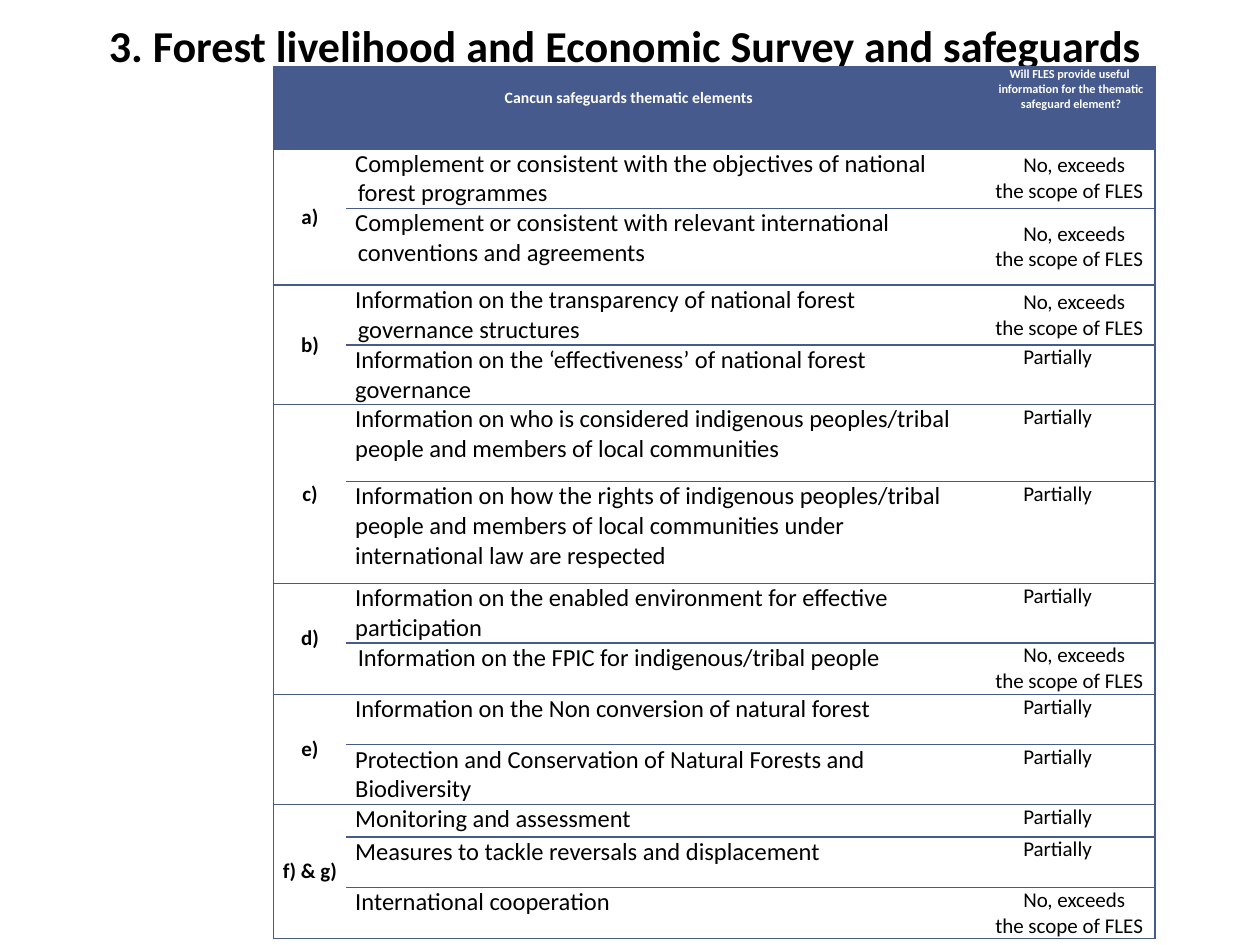
from typing import NamedTuple

from lxml.etree import SubElement
from pptx import Presentation
from pptx.dml.color import RGBColor
from pptx.enum.text import MSO_ANCHOR as Anchor, MSO_AUTO_SIZE as AutoSize, PP_ALIGN as Align
from pptx.oxml.ns import qn
from pptx.util import Pt

BLUE, BLACK, WHITE = "475A8D", "000000", "FFFFFF"
HANG = (1.5, -1.5)  # left margin and first-line indent
FLUSH = (0, 0)
NUDGE = (1.5, 0)
ANSWER_INDENT = (1.5, 16)
NO, PARTLY = "No, exceeds the scope of FLES", "Partially"


class Element(NamedTuple):
    text: str
    answer: str
    height: float
    indent: tuple = HANG
    anchor: Anchor = Anchor.TOP  # of the answer


class Safeguard(NamedTuple):
    label: str
    elements: list


SAFEGUARDS = [
    Safeguard("a)", [
        Element("Complement or consistent with the objectives of national forest programmes",
                NO, 28.8, anchor=Anchor.MIDDLE),
        Element("Complement or consistent with relevant international conventions and agreements",
                NO, 43.9, anchor=Anchor.MIDDLE)]),
    Safeguard("b)", [
        Element("Information on the transparency of national forest governance structures",
                NO, 28.8, anchor=Anchor.MIDDLE),
        Element("Information on the ‘effectiveness’ of national forest governance",
                PARTLY, 28.8, FLUSH)]),
    Safeguard("c)", [
        Element("Information on who is considered indigenous peoples/tribal people and members "
                "of local communities", PARTLY, 43.9, FLUSH),
        Element("Information on how the rights of indigenous peoples/tribal people and members "
                "of local communities under international law are respected",
                PARTLY, 58.3, FLUSH)]),
    Safeguard("d)", [
        Element("Information on the enabled environment for effective participation",
                PARTLY, 28.8, FLUSH),
        Element("Information on the FPIC for indigenous/tribal people", NO, 28.8, NUDGE)]),
    Safeguard("e)", [
        Element("Information on the Non conversion of natural forest", PARTLY, 28.8, FLUSH),
        Element("Protection and Conservation of Natural Forests and Biodiversity",
                PARTLY, 28.8, FLUSH)]),
    Safeguard("f) & g)", [
        Element("Monitoring and assessment", PARTLY, 18.7),
        Element("Measures to tackle reversals and displacement", PARTLY, 28.8),
        Element("International cooperation", NO, 23.8, anchor=Anchor.MIDDLE)]),
]


def rgb(color: str) -> RGBColor:
    return RGBColor.from_string(color)


def write(tf, text: str, *, size: float, bold: bool = False, color: str = BLACK,
          align: Align = Align.LEFT, indent: tuple = FLUSH) -> None:
    p = tf.paragraphs[0]
    p.alignment = align
    pPr = p._p.get_or_add_pPr()
    pPr.set("marL", str(Pt(indent[0])))
    pPr.set("indent", str(Pt(indent[1])))
    r = p.add_run()
    r.text = text
    r.font.name, r.font.size, r.font.bold = "Calibri", Pt(size), bold
    r.font.color.rgb = rgb(color)


def set_borders(cell, sides: str) -> None:
    """Rule the given sides (of L, R, T, B) and clear the others."""
    tcPr = cell._tc.get_or_add_tcPr()
    for i, side in enumerate("LRTB"):
        ln = SubElement(tcPr, qn("a:ln" + side), w=str(Pt(1)))
        tcPr.insert(i, ln)
        if side in sides:
            fill = SubElement(ln, qn("a:solidFill"))
            SubElement(fill, qn("a:srgbClr"), val=BLUE)
        else:
            SubElement(ln, qn("a:noFill"))


def format_cell(cell, sides: str, header: bool) -> None:
    set_borders(cell, sides)
    cell.margin_left = cell.margin_right = Pt(5)
    cell.margin_top = cell.margin_bottom = 0
    if header:
        cell.fill.solid()
        cell.fill.fore_color.rgb = rgb(BLUE)
    else:
        cell.fill.background()


def add_title(s, text: str) -> None:
    sp = s.shapes.title
    sp.left, sp.top, sp.width, sp.height = Pt(36), Pt(12.2), Pt(648), Pt(26.6)
    tf = sp.text_frame
    tf.auto_size, tf.vertical_anchor = AutoSize.NONE, Anchor.MIDDLE
    write(tf, text, size=25.2, bold=True, align=Align.CENTER)


def add_safeguard_table(s) -> None:
    heights = [46.8] + [e.height for g in SAFEGUARDS for e in g.elements]
    table = s.shapes.add_table(len(heights), 3, Pt(156.2), Pt(38.2),
                               Pt(504), Pt(sum(heights))).table
    table.first_row = table.horz_banding = False
    for col, width in zip(table.columns, (41.8, 364.3, 97.9)):
        col.width = Pt(width)
    for i, height in enumerate(heights):
        table.rows[i].height = Pt(height)
        for j, sides in enumerate(("LTB", "TB", "RTB")):
            format_cell(table.cell(i, j), sides, header=i == 0)

    # Header row
    head = table.cell(0, 0)
    head.merge(table.cell(0, 1))
    head.vertical_anchor, head.margin_bottom = Anchor.MIDDLE, Pt(11)
    write(head.text_frame, "Cancun safeguards thematic elements", size=9, bold=True,
          color=WHITE, align=Align.CENTER, indent=HANG)
    write(table.cell(0, 2).text_frame,
          "Will FLES provide useful information for the thematic safeguard element?",
          size=7, bold=True, color=WHITE, align=Align.CENTER, indent=HANG)

    # One merged label per safeguard, one row per element
    row = 1
    for group in SAFEGUARDS:
        label = table.cell(row, 0)
        label.merge(table.cell(row + len(group.elements) - 1, 0))
        label.vertical_anchor = Anchor.MIDDLE
        write(label.text_frame, group.label, size=12, bold=True,
              align=Align.CENTER, indent=HANG)
        for element in group.elements:
            write(table.cell(row, 1).text_frame, element.text, size=14, indent=element.indent)
            answer = table.cell(row, 2)
            answer.vertical_anchor = element.anchor
            write(answer.text_frame, element.answer, size=12, indent=ANSWER_INDENT)
            row += 1


def main() -> None:
    prs = Presentation()
    prs.slide_width, prs.slide_height = Pt(720), Pt(540)
    s = prs.slides.add_slide(prs.slide_layouts[5])
    add_title(s, "3. Forest livelihood and Economic Survey and safeguards ")
    add_safeguard_table(s)
    prs.save("out.pptx")


if __name__ == "__main__":
    main()
